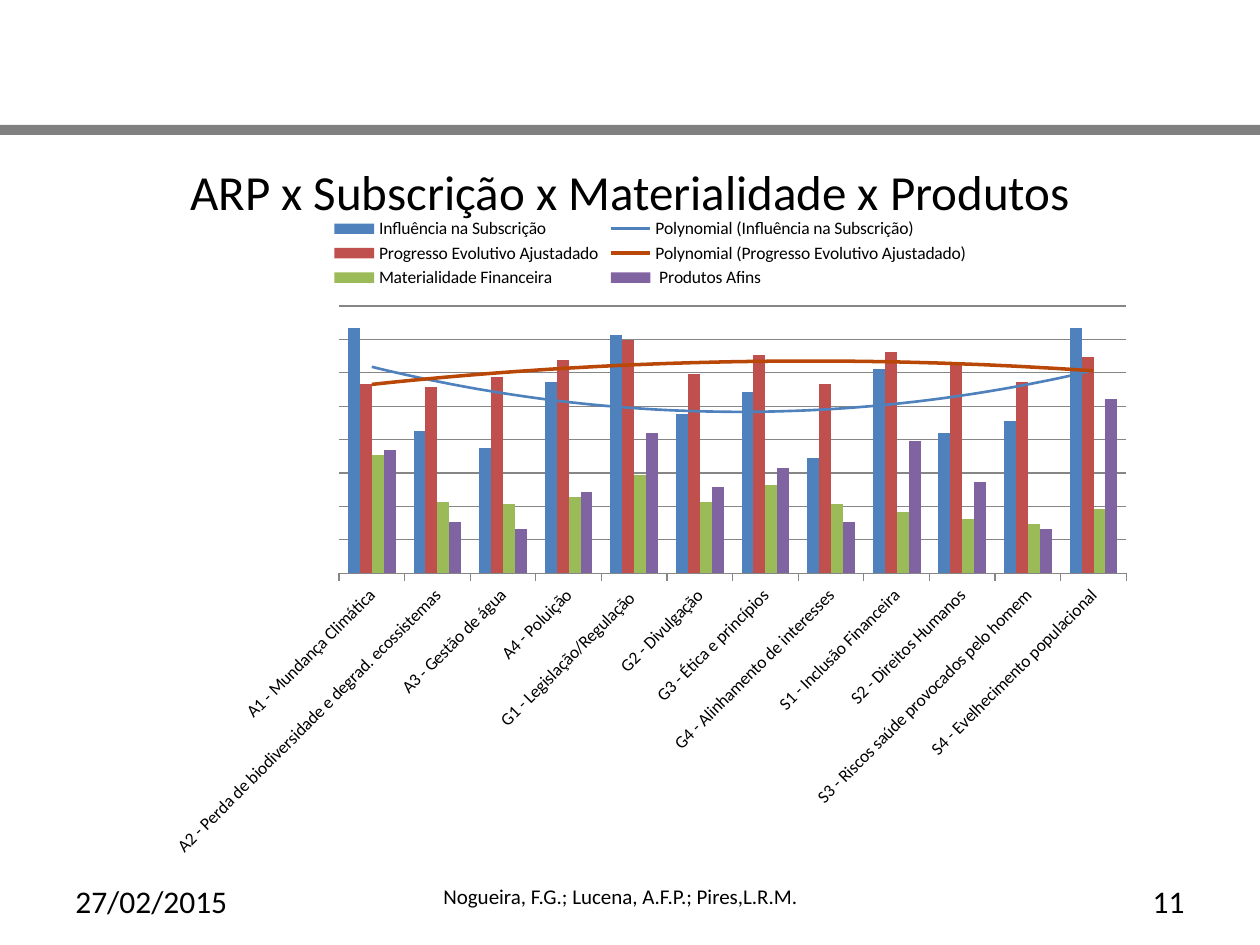
from dataclasses import dataclass

import pptx
import pptx.chart.data
import pptx.dml.color
import pptx.enum.chart
import pptx.enum.shapes
import pptx.enum.text
import pptx.oxml
import pptx.oxml.ns
import pptx.util
from pptx.util import Inches

FONT = "Calibri"
ALIGN = pptx.enum.text.PP_ALIGN
CHART_WIDTH, CHART_HEIGHT = 7.87, 5.28
qn = pptx.oxml.ns.qn


@dataclass
class Label:
    text: str
    left: float
    top: float
    width: float
    height: float
    size: float
    align: ALIGN = ALIGN.LEFT


@dataclass
class Series:
    name: str
    color: str
    values: tuple
    trend_color: str = ""
    trend_width: float = 0


LABELS = [
    Label("27/02/2015", 0.5, 6.95, 2.33, 0.4, 18),
    Label("11", 7.17, 6.95, 2.33, 0.4, 18, ALIGN.RIGHT),
    Label("Nogueira, F.G.; Lucena, A.F.P.; Pires,L.R.M.", 3.42, 6.96, 3.17, 0.4, 12),
    Label("ARP x Subscrição x Materialidade x Produtos", 0.43, 1.23, 9.14, 0.55, 28, ALIGN.CENTER),
]
CATEGORIES = [
    "A1 - Mundança Climática",
    "A2 - Perda de biodiversidade e degrad. ecossistemas",
    "A3 - Gestão de água",
    "A4 - Poluição",
    "G1 - Legislação/Regulação ",
    "G2 - Divulgação",
    "G3 - Ética e princípios",
    "G4 - Alinhamento de interesses",
    "S1 - Inclusão Financeira",
    "S2 - Direitos Humanos",
    "S3 - Riscos saúde provocados pelo homem",
    "S4 - Evelhecimento populacional",
]
SERIES = [
    Series("Influência na Subscrição", "4F81BD",
           (100, 58, 51, 78, 97, 65, 74, 47, 83, 57, 62, 100), "4F81BD", 1.5),
    Series("Progresso Evolutivo Ajustadado", "C0504D",
           (77, 76, 80, 87, 95, 81, 89, 77, 90, 85, 78, 88), "B94707", 2),
    Series("Materialidade Financeira", "9BBB59",
           (48, 29, 28, 31, 40, 29, 36, 28, 25, 22, 20, 26)),
    Series(" Produtos Afins", "8064A2",
           (50, 21, 18, 33, 57, 35, 43, 21, 54, 37, 18, 71)),
]


def rgb(color: str) -> pptx.dml.color.RGBColor:
    return pptx.dml.color.RGBColor.from_string(color)


def chart_xml(tag: str, content: str):
    """Parse a chart element that may hold drawing elements."""
    namespaces = pptx.oxml.ns.nsdecls("c", "a")
    return pptx.oxml.parse_xml(f"<c:{tag} {namespaces}>{content}</c:{tag}>")


def add_label(slide, label: Label) -> None:
    box = slide.shapes.add_textbox(
        Inches(label.left), Inches(label.top), Inches(label.width), Inches(label.height))
    box.text_frame.word_wrap = True
    paragraph = box.text_frame.paragraphs[0]
    paragraph.alignment = label.align
    run = paragraph.add_run()
    run.text = label.text
    run.font.name = FONT
    run.font.size = pptx.util.Pt(label.size)
    run.font.color.rgb = rgb("000000")


def add_header_bar(slide) -> None:
    bar = slide.shapes.add_shape(
        pptx.enum.shapes.MSO_SHAPE.RECTANGLE, 0, Inches(0.99), Inches(10), Inches(0.08))
    bar.shadow.inherit = False
    bar.fill.solid()
    bar.fill.fore_color.rgb = rgb("808080")
    bar.line.fill.background()


def set_layout(parent, index: int, left: float, top: float, width: float, height: float,
               target: str = "") -> None:
    """Place a chart part, in inches from the chart's corner."""
    for old_layout in parent.findall(qn("c:layout")):
        parent.remove(old_layout)
    content = (f'{target}<c:xMode val="edge"/><c:yMode val="edge"/>'
               f'<c:x val="{left / CHART_WIDTH}"/><c:y val="{top / CHART_HEIGHT}"/>'
               f'<c:w val="{width / CHART_WIDTH}"/><c:h val="{height / CHART_HEIGHT}"/>')
    parent.insert(index, chart_xml("layout", f"<c:manualLayout>{content}</c:manualLayout>"))


def add_trend(plot_series, series: Series) -> None:
    """Add a second-order polynomial trend line."""
    trend = chart_xml("trendline", (
        f'<c:spPr><a:ln w="{pptx.util.Pt(series.trend_width)}"><a:solidFill>'
        f'<a:srgbClr val="{series.trend_color}"/></a:solidFill></a:ln></c:spPr>'
        '<c:trendlineType val="poly"/><c:order val="2"/>'
        '<c:dispRSqr val="0"/><c:dispEq val="0"/>'))
    plot_series._element.find(qn("c:cat")).addprevious(trend)


def style_axes(chart) -> None:
    category_axis, value_axis = chart.category_axis, chart.value_axis
    category_axis.major_tick_mark = pptx.enum.chart.XL_TICK_MARK.OUTSIDE
    category_axis.format.line.color.rgb = rgb("868686")
    category_axis.tick_labels.font.size = pptx.util.Pt(10)
    text_body = category_axis._element.find(qn("c:txPr"))
    text_body.find(qn("a:bodyPr")).set("rot", "-2700000")
    value_axis.minimum_scale = 0
    value_axis.maximum_scale = 108.8
    value_axis.major_unit = 13.6
    value_axis.has_major_gridlines = True
    value_axis.major_gridlines.format.line.color.rgb = rgb("868686")
    value_axis.tick_labels.number_format = "0.00%"
    value_axis.tick_labels.number_format_is_linked = False
    value_axis.visible = False


def add_risk_chart(slide) -> None:
    data = pptx.chart.data.CategoryChartData()
    data.categories = CATEGORIES
    for series in SERIES:
        data.add_series(series.name, series.values)
    chart = slide.shapes.add_chart(
        pptx.enum.chart.XL_CHART_TYPE.COLUMN_CLUSTERED,
        Inches(1.22), Inches(1.62), Inches(CHART_WIDTH), Inches(CHART_HEIGHT), data).chart
    chart.has_title = False
    chart.font.name = FONT
    chart.font.size = pptx.util.Pt(10)
    chart.font.color.rgb = rgb("000000")
    plot = chart.plots[0]
    plot.vary_by_categories = False
    plot.gap_width = 150
    plot.overlap = 0
    for plot_series, series in zip(plot.series, SERIES):
        plot_series.format.fill.solid()
        plot_series.format.fill.fore_color.rgb = rgb(series.color)
        if series.trend_color:
            add_trend(plot_series, series)
    style_axes(chart)
    chart.has_legend = True
    chart.legend.position = pptx.enum.chart.XL_LEGEND_POSITION.TOP
    chart.legend.include_in_layout = False
    set_layout(chart.legend._element, 1, 1.38, 0.08, 5.12, 0.62)
    plot_area = chart._chartSpace.chart.plotArea
    set_layout(plot_area, 0, 1.47, 0.81, 6.25, 2.12, '<c:layoutTarget val="inner"/>')


def main() -> None:
    presentation = pptx.Presentation()
    presentation.slide_width = Inches(10)
    presentation.slide_height = Inches(7.5)
    slide = presentation.slides.add_slide(presentation.slide_layouts[6])
    add_header_bar(slide)
    for label in LABELS:
        add_label(slide, label)
    add_risk_chart(slide)
    presentation.save("out.pptx")


if __name__ == "__main__":
    main()
